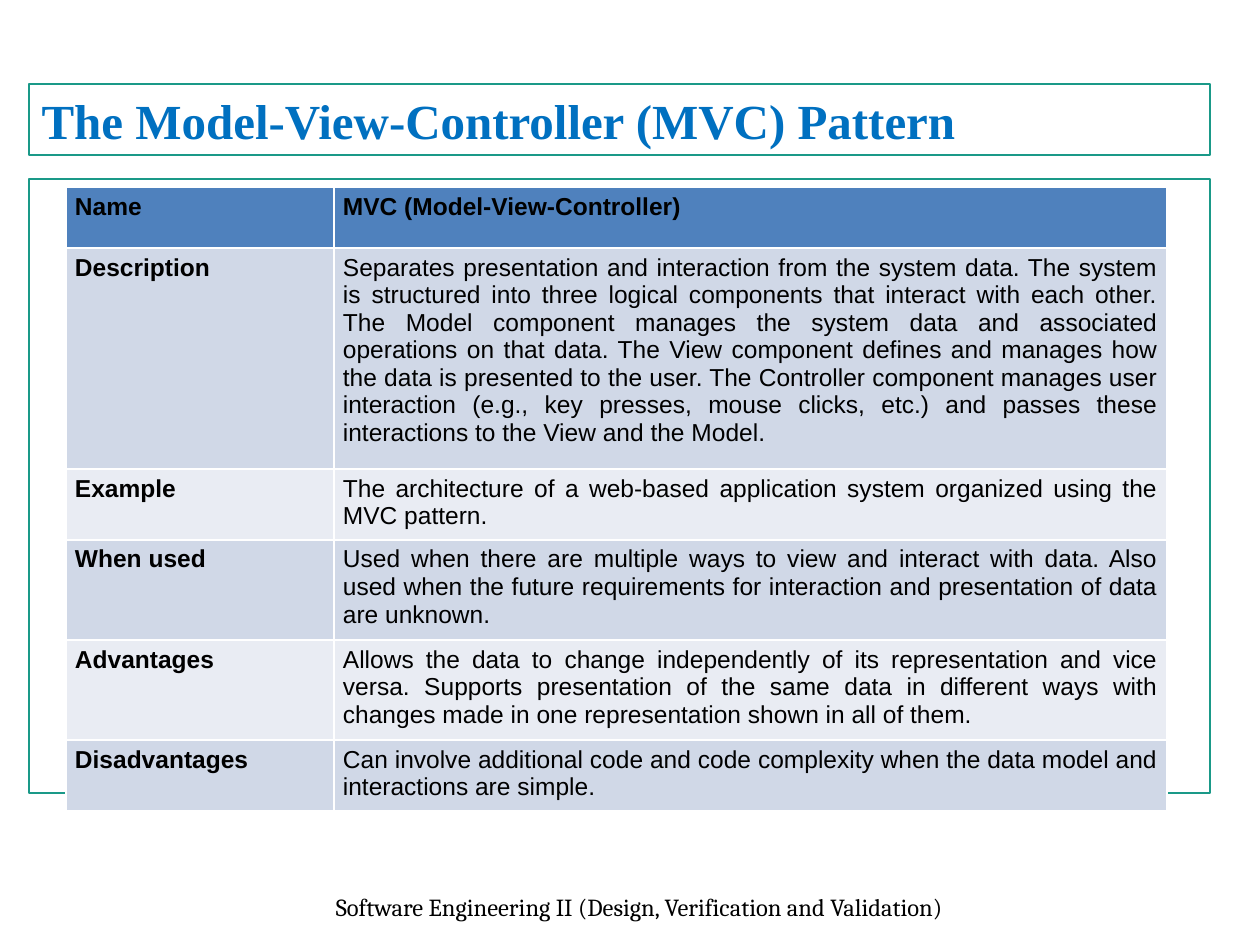
"""Build the slide describing the Model-View-Controller pattern."""
from typing import NamedTuple

from lxml.etree import SubElement
from pptx import Presentation
from pptx.dml.color import RGBColor
from pptx.enum.shapes import MSO_SHAPE as Shape
from pptx.enum.text import MSO_ANCHOR as Anchor, MSO_AUTO_SIZE as AutoSize, PP_ALIGN as Align
from pptx.oxml.ns import qn
from pptx.util import Emu, Pt

EMU_PER_PX = 914400 / 126
TEAL, WHITE, BLACK = "1A9988", "FFFFFF", "000000"
HEADER_FILL, BAND_FILLS = "4F81BD", ("E9ECF3", "D0D8E7")


class Box(NamedTuple):
    """Position and size in px."""
    left: int
    top: int
    width: int
    height: int


class Row(NamedTuple):
    """One table row: its label, its text and its height in px."""
    label: str
    text: str
    height: int


ROWS = [
    Row("Name", "MVC (Model-View-Controller)", 61),
    Row("Description",
        "Separates presentation and interaction from the system data. The system is "
        "structured into three logical components that interact with each other. The Model "
        "component manages the system data and associated operations on that data. The View "
        "component defines and manages how the data is presented to the user. The Controller "
        "component manages user interaction (e.g., key presses, mouse clicks, etc.) and "
        "passes these interactions to the View and the Model.", 221),
    Row("Example",
        "The architecture of a web-based application system organized using the MVC pattern.",
        67),
    Row("When used",
        "Used when there are multiple ways to view and interact with data. Also used when "
        "the future requirements for interaction and presentation of data are unknown.", 95),
    Row("Advantages",
        "Allows the data to change independently of its representation and vice versa. "
        "Supports presentation of the same data in different ways with changes made in one "
        "representation shown in all of them.", 95),
    Row("Disadvantages",
        "Can involve additional code and code complexity when the data model and "
        "interactions are simple.", 67),
]
COLUMN_WIDTHS = (268, 833)


def px(n: int) -> Emu:
    """Turn px into EMU."""
    return Emu(round(n * EMU_PER_PX))


def rgb(color: str) -> RGBColor:
    """Turn a hex string into a colour."""
    return RGBColor.from_string(color)


def place(s, box: Box) -> None:
    """Move and size a shape."""
    s.left, s.top, s.width, s.height = map(px, box)


def outline(s) -> None:
    """Give a shape the white fill and thin teal frame."""
    s.fill.solid()
    s.fill.fore_color.rgb = rgb(WHITE)
    s.line.color.rgb = rgb(TEAL)
    s.line.width = Pt(0.75)


def write(tf, text: str, font: str, size: int, color: str, bold: bool, align: Align) -> None:
    """Set one formatted paragraph."""
    tf.text = text
    p = tf.paragraphs[0]
    p.alignment = align
    f = p.runs[0].font
    f.name, f.size, f.bold = font, Pt(size), bold
    f.color.rgb = rgb(color)


def border(cell, color: str, width: float) -> None:
    """Draw all four borders of a cell."""
    tc_pr = cell._tc.get_or_add_tcPr()
    for side in ("lnL", "lnR", "lnT", "lnB"):
        ln = SubElement(tc_pr, qn(f"a:{side}"), w=str(Pt(width)))
        fill = SubElement(ln, qn("a:solidFill"))
        SubElement(fill, qn("a:srgbClr"), val=color)


def add_title(slide, text: str, box: Box) -> None:
    """Fill and frame the title placeholder."""
    s = slide.shapes.title
    place(s, box)
    outline(s)
    tf = s.text_frame
    write(tf, text, "Times New Roman", 28, "0070C0", True, Align.JUSTIFY)
    tf.vertical_anchor = Anchor.TOP
    tf.auto_size = AutoSize.NONE


def add_panel(slide, box: Box) -> None:
    """Add the framed rectangle behind the table."""
    s = slide.shapes.add_shape(Shape.RECTANGLE, *map(px, box))
    s.shadow.inherit = False
    outline(s)


def add_pattern_table(slide, rows: list[Row], left: int, top: int) -> None:
    """Add the banded table with a bold label column."""
    box = Box(left, top, sum(COLUMN_WIDTHS), sum(row.height for row in rows))
    table = slide.shapes.add_table(len(rows), len(COLUMN_WIDTHS), *map(px, box)).table
    for column, width in zip(table.columns, COLUMN_WIDTHS):
        column.width = px(width)
    for i, row in enumerate(rows):
        table.rows[i].height = px(row.height)
        for j, text in enumerate((row.label, row.text)):
            cell = table.cell(i, j)
            cell.margin_left = cell.margin_right = px(9)
            cell.margin_top = cell.margin_bottom = px(6)
            border(cell, WHITE, 0.96)
            cell.fill.solid()
            cell.fill.fore_color.rgb = rgb(BAND_FILLS[i % 2] if i else HEADER_FILL)
            write(cell.text_frame, text, "Arial", 14, BLACK, i == 0 or j == 0, Align.JUSTIFY)


def add_footer(slide, text: str, box: Box) -> None:
    """Add the centred course name."""
    tf = slide.shapes.add_textbox(*map(px, box)).text_frame
    tf.word_wrap = True
    tf.vertical_anchor = Anchor.MIDDLE
    write(tf, text, "Cambria", 14, BLACK, False, Align.CENTER)


def main() -> None:
    """Build and save the slide."""
    prs = Presentation()
    prs.slide_width, prs.slide_height = px(1260), px(945)
    slide = prs.slides.add_slide(prs.slide_layouts[5])
    add_footer(slide, "Software Engineering II (Design, Verification and Validation)",
               Box(230, 880, 819, 54))
    add_panel(slide, Box(29, 179, 1181, 614))
    add_title(slide, "The Model-View-Controller (MVC) Pattern", Box(29, 84, 1181, 71))
    add_pattern_table(slide, ROWS, 66, 187)
    prs.save("out.pptx")


if __name__ == "__main__":
    main()
